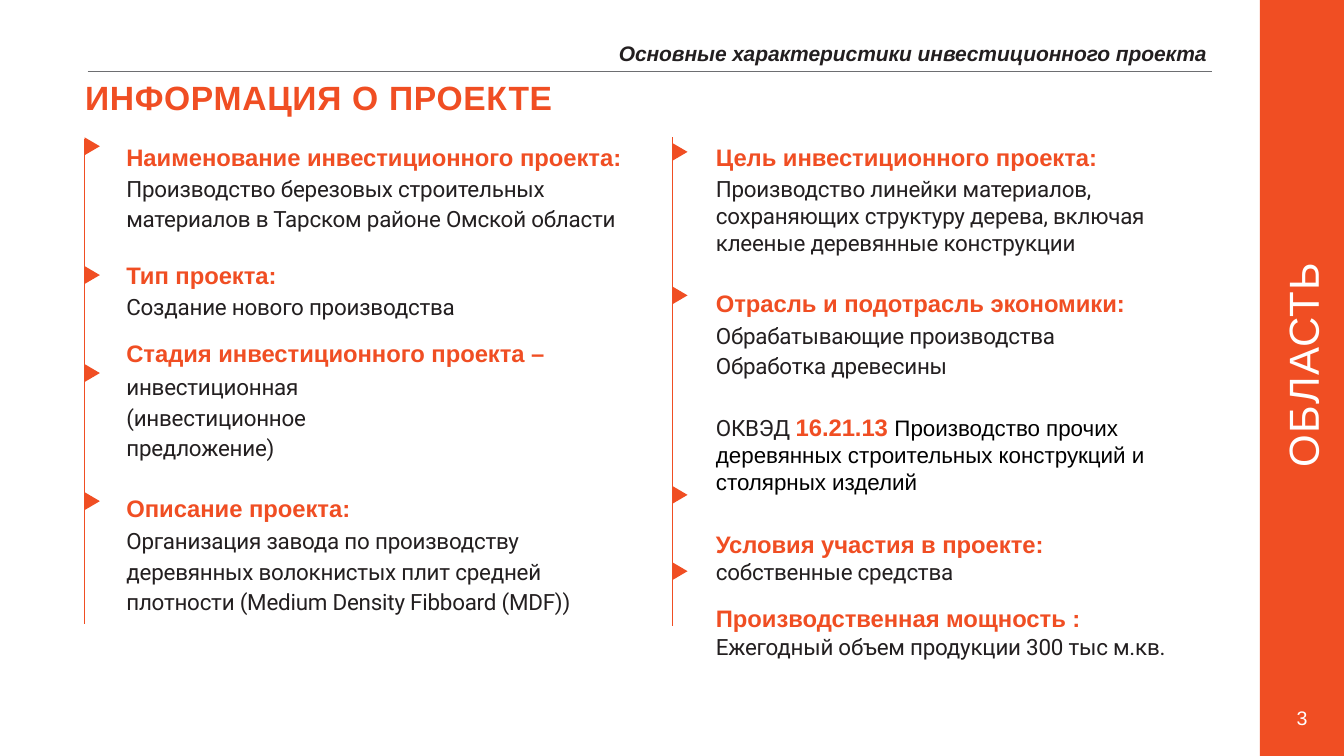
from pptx import Presentation
from pptx.dml.color import RGBColor
from pptx.enum.shapes import MSO_CONNECTOR, MSO_SHAPE
from pptx.enum.text import MSO_ANCHOR, MSO_AUTO_SIZE, PP_ALIGN
from pptx.oxml.ns import qn
from pptx.util import Pt
from lxml.etree import SubElement

COLOURS = {
    "accent": "F04E23",
    "ink": "231F20",
    "black": "000000",
    "white": "FFFFFF",
    "rule": "6D6E71",
}
HEADING = dict(size=17, font="Arial", colour="accent", bold=True, spacing=-0.05)
BODY = dict(size=16, font="Roboto", colour="ink", spacing=-0.15)
PLAIN = dict(size=16, font="Arial", colour="black")

LEFT_COLUMN = [
    (0, [("Наименование инвестиционного проекта:", HEADING)]),
    (0, [("Производство березовых строительных материалов "
          "в Тарском районе Омской области", BODY)]),
    (18.8, [("Тип проекта:", HEADING)]),
    (0, [("Создание нового производства", BODY)]),
    (11.3, [("Стадия инвестиционного проекта –", HEADING)]),
    (1.5, [("инвестиционная\n(инвестиционное\nпредложение)", BODY)]),
    (21.2, [("Описание проекта:", HEADING)]),
    (0.8, [("Организация завода по производству деревянных волокнистых плит "
            "средней плотности (Medium Density Fibboard (MDF))", BODY)]),
]
RIGHT_COLUMN = [
    (0, [("Цель инвестиционного проекта:", HEADING)]),
    (2.9, [("Производство линейки материалов, сохраняющих структуру дерева, "
            "включая клееные деревянные конструкции", BODY)]),
    (25.1, [("Отрасль и подотрасль экономики:", HEADING)]),
    (2.9, [("Обрабатывающие производства", BODY)]),
    (2.2, [("Обработка древесины", BODY)]),
    (25.8, [("ОКВЭД ", BODY), ("16.21.13 ", HEADING),
            ("Производство прочих деревянных строительных конструкций "
             "и столярных изделий", PLAIN)]),
    (25.8, [("Условия участия в проекте:", HEADING)]),
    (0, [("собственные средства", BODY)]),
    (14.4, [("Производственная мощность :", HEADING)]),
    (0.8, [("Ежегодный объем продукции 300 тыс м.кв.", BODY)]),
]


def colour_of(name):
    return RGBColor.from_string(COLOURS[name])


def write(para, text, size, font, colour, bold=False, italic=False, spacing=0):
    for index, line in enumerate(text.split("\n")):
        if index:
            para.add_line_break()
        span = para.add_run()
        span.text = line
        span.font.size = Pt(size)
        span.font.name = font
        span.font.bold = bold
        span.font.italic = italic
        span.font.color.rgb = colour_of(colour)
        span.font._element.set("spc", str(round(spacing * 100)))


class ProjectSlide:
    def __init__(self, deck):
        self.page = deck.slides.add_slide(deck.slide_layouts[5])
        self.shapes = self.page.shapes

    def frame(self, box, inset_left=0, inset_top=0, anchor=MSO_ANCHOR.TOP):
        frame = box.text_frame
        frame.word_wrap = True
        frame.auto_size = MSO_AUTO_SIZE.NONE
        frame.vertical_anchor = anchor
        frame.margin_left, frame.margin_top = Pt(inset_left), Pt(inset_top)
        frame.margin_right = frame.margin_bottom = 0
        return frame

    def title(self, text, left, top, width, height, **style):
        box = self.shapes.title
        box.left, box.top = Pt(left), Pt(top)
        box.width, box.height = Pt(width), Pt(height)
        para = self.frame(box, inset_left=24, inset_top=31).paragraphs[0]
        para.alignment = PP_ALIGN.LEFT
        write(para, text, **style)

    def label(self, text, left, top, width, height, align=PP_ALIGN.LEFT,
              turn=0, anchor=MSO_ANCHOR.TOP, **style):
        box = self.shapes.add_textbox(Pt(left), Pt(top), Pt(width), Pt(height))
        box.rotation = turn
        para = self.frame(box, anchor=anchor).paragraphs[0]
        para.alignment = align
        write(para, text, **style)

    def column(self, entries, left, top, width, height, inset_top, pitch):
        box = self.shapes.add_textbox(Pt(left), Pt(top), Pt(width), Pt(height))
        frame = self.frame(box, inset_left=1, inset_top=inset_top)
        for index, (gap, spans) in enumerate(entries):
            para = frame.add_paragraph() if index else frame.paragraphs[0]
            para.line_spacing = Pt(pitch)
            para.space_before = Pt(gap)
            for text, style in spans:
                write(para, text, **style)

    def paint(self, shape, colour):
        shape.shadow.inherit = False
        shape.fill.solid()
        shape.fill.fore_color.rgb = colour_of(colour)
        shape.line.fill.background()

    def band(self, left, top, width, height, colour):
        band = self.shapes.add_shape(
            MSO_SHAPE.RECTANGLE, Pt(left), Pt(top), Pt(width), Pt(height))
        self.paint(band, colour)

    def line(self, x1, y1, x2, y2, colour, weight):
        line = self.shapes.add_connector(
            MSO_CONNECTOR.STRAIGHT, Pt(x1), Pt(y1), Pt(x2), Pt(y2))
        line.line.color.rgb = colour_of(colour)
        line.line.width = Pt(weight)
        SubElement(line._element.spPr, qn("a:effectLst"))

    def flags(self, left, tips, colour, depth=10.9, half=6.4):
        builder = None
        for tip in tips:
            start = Pt(left + depth), Pt(tip)
            if builder is None:
                builder = self.shapes.build_freeform(*start)
            else:
                builder.move_to(*start)
            builder.add_line_segments(
                [(Pt(left), Pt(tip - half)), (Pt(left), Pt(tip + half))], close=True)
        self.paint(builder.convert_to_shape(), colour)


def main():
    deck = Presentation()
    deck.slide_width, deck.slide_height = Pt(960), Pt(540)
    slide = ProjectSlide(deck)

    slide.band(900, 0, 60, 540, "accent")
    slide.label("ОБЛАСТЬ", 830, 240.6, 200, 40, align=PP_ALIGN.CENTER, turn=270,
                anchor=MSO_ANCHOR.MIDDLE, size=30, font="Arial", colour="white",
                spacing=0.9)
    slide.title("ИНФОРМАЦИЯ О ПРОЕКТЕ", 36.7, 24, 846.7, 60, size=24,
                font="Arial", colour="accent", bold=True, spacing=0.5)
    slide.label("Основные характеристики инвестиционного проекта",
                442, 29, 430, 20, size=15, font="Arial", colour="ink",
                bold=True, italic=True, spacing=-0.05)
    slide.line(62.6, 51, 865.6, 51, "rule", 0.5)

    slide.column(LEFT_COLUMN, 89.3, 98, 368, 350, inset_top=2, pitch=22)
    slide.line(60.4, 99, 60.4, 445.7, "accent", 1)
    slide.flags(60.4, [104.5, 196.5, 266.5, 358], "accent")

    slide.column(RIGHT_COLUMN, 510.4, 98, 349, 390, inset_top=5, pitch=19.2)
    slide.line(480.2, 98, 480.2, 447, "accent", 1)
    slide.flags(480.2, [108.5, 211, 353.5, 408], "accent")

    slide.label("3", 900, 504, 60, 20, align=PP_ALIGN.CENTER,
                size=14, font="Arial", colour="white")
    deck.save("out.pptx")


if __name__ == "__main__":
    main()
